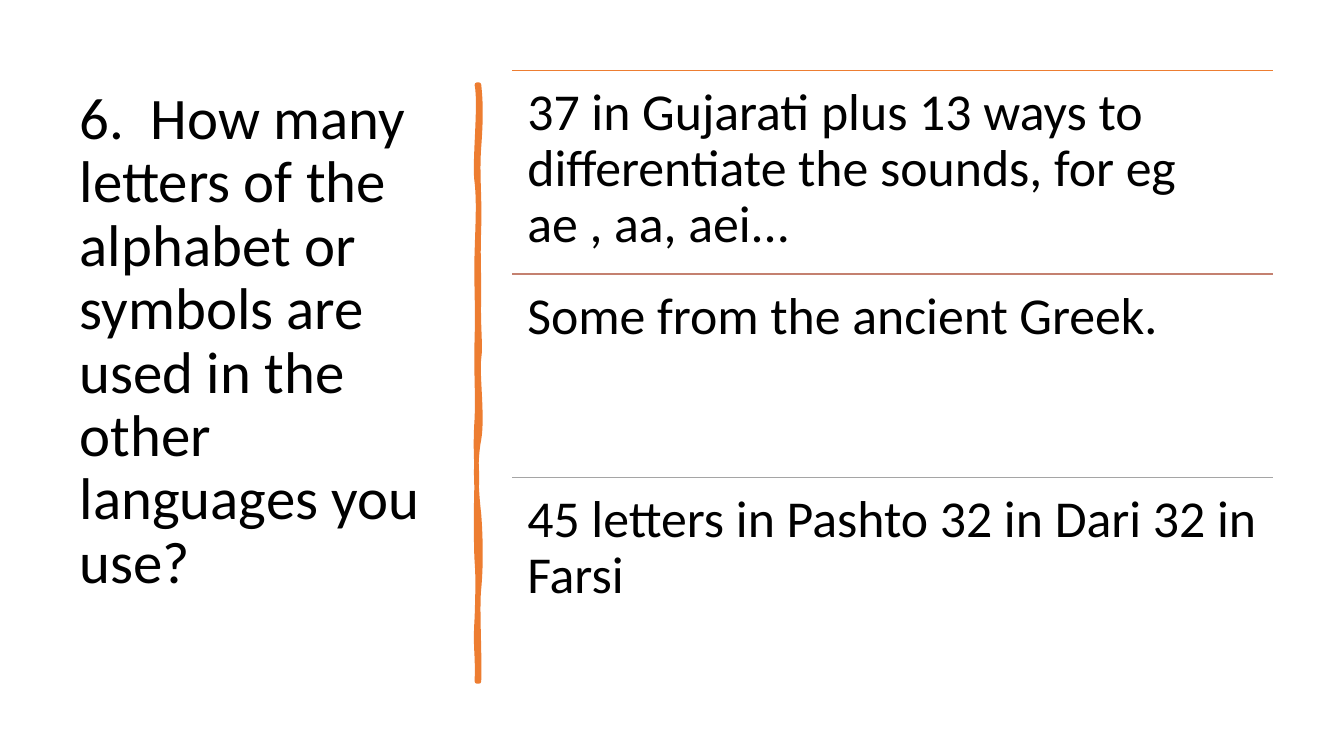
from dataclasses import dataclass

from lxml import etree
from pptx import Presentation
from pptx import util as u
from pptx.dml.color import RGBColor
from pptx.enum import shapes, text
from pptx.oxml.ns import qn
from pptx.util import Inches


@dataclass(frozen=True)
class Theme:
    font: str = "Calibri"
    ink: str = "000000"
    orange: str = "ED7D31"
    clay: str = "C48170"
    grey: str = "A5A5A5"
    title_size: float = 42
    answer_size: float = 37
    brush_width: float = 3.25
    rule_width: float = 1


theme = Theme()


def write(frame, words, size):
    frame.word_wrap = True
    frame.auto_size = text.MSO_AUTO_SIZE.NONE
    para = frame.paragraphs[0]
    para.alignment = text.PP_ALIGN.LEFT
    para.line_spacing = 0.9
    span = para.add_run()
    span.text = words
    span.font.name = theme.font
    span.font.size = u.Pt(size)
    span.font.color.rgb = RGBColor.from_string(theme.ink)


deck = Presentation()
deck.slide_width, deck.slide_height = Inches(13.33), Inches(7.5)
page = deck.slides.add_slide(deck.slide_layouts[5])

# Question; the deeper bottom margin lifts the centred text
title = page.shapes.title
title.left, title.top = Inches(0.69), Inches(0.7)
title.width, title.height = Inches(3.74), Inches(6.11)
title.text_frame.vertical_anchor = text.MSO_ANCHOR.MIDDLE
title.text_frame.margin_bottom = Inches(0.77)
write(title.text_frame,
      "6.  How many letters of the alphabet or symbols are used in the other languages you use?",
      theme.title_size)

# Hand-drawn divider: one shape with a stroked outline and a filled body.
# Each curve is two control points and an end point, in inches.
outline_curves = [
    (4.77, 1.02, 4.77, 1.19, 4.75, 1.46), (4.73, 1.73, 4.76, 1.95, 4.75, 2.26),
    (4.74, 2.57, 4.75, 2.62, 4.75, 2.94), (4.74, 3.25, 4.77, 3.42, 4.75, 3.56),
    (4.73, 3.7, 4.79, 4.14, 4.75, 4.36), (4.71, 4.57, 4.72, 4.84, 4.75, 5.1),
    (4.77, 5.36, 4.77, 5.64, 4.75, 5.84), (4.73, 6.03, 4.76, 6.5, 4.75, 6.76),
    (4.74, 6.76, 4.73, 6.76, 4.73, 6.76), (4.74, 6.46, 4.71, 6.44, 4.73, 6.13),
    (4.74, 5.83, 4.74, 5.7, 4.73, 5.57), (4.72, 5.44, 4.72, 4.95, 4.73, 4.77),
    (4.73, 4.59, 4.71, 4.45, 4.73, 4.15), (4.74, 3.86, 4.72, 3.73, 4.73, 3.35),
    (4.74, 2.98, 4.72, 2.81, 4.73, 2.5), (4.74, 2.18, 4.75, 2, 4.73, 1.81),
    (4.7, 1.63, 4.77, 1.04, 4.73, 0.84), (4.74, 0.84, 4.74, 0.84, 4.75, 0.84),
]
body_curves = [
    (4.75, 1.15, 4.72, 1.25, 4.75, 1.52), (4.77, 1.79, 4.74, 1.97, 4.75, 2.08),
    (4.76, 2.2, 4.74, 2.55, 4.75, 2.94), (4.76, 3.33, 4.73, 3.43, 4.75, 3.62),
    (4.77, 3.81, 4.77, 3.97, 4.75, 4.3), (4.72, 4.63, 4.75, 4.74, 4.75, 5.16),
    (4.75, 5.57, 4.74, 5.53, 4.75, 5.78), (4.76, 6.03, 4.74, 6.47, 4.75, 6.76),
    (4.74, 6.75, 4.73, 6.75, 4.73, 6.76), (4.7, 6.49, 4.74, 6.32, 4.73, 6.13),
    (4.72, 5.95, 4.75, 5.69, 4.73, 5.39), (4.71, 5.1, 4.76, 5, 4.73, 4.71),
    (4.7, 4.42, 4.77, 4.2, 4.73, 3.86), (4.69, 3.51, 4.74, 3.25, 4.73, 3),
    (4.71, 2.75, 4.71, 2.59, 4.73, 2.38), (4.74, 2.16, 4.74, 1.85, 4.73, 1.64),
    (4.71, 1.43, 4.75, 1.21, 4.73, 0.84), (4.74, 0.84, 4.74, 0.84, 4.75, 0.84),
]
brush_left, brush_top, brush_right, brush_bottom = map(Inches, (4.73, 0.84, 4.75, 6.76))
builder = page.shapes.build_freeform(brush_right, brush_top)
builder.add_line_segments([(brush_right, brush_bottom), (brush_left, brush_bottom),
                           (brush_left, brush_top)], close=True)
brush = builder.convert_to_shape()
brush.shadow.inherit = False
brush.fill.solid()
brush.fill.fore_color.rgb = RGBColor.from_string(theme.orange)
brush.line.color.rgb = RGBColor.from_string(theme.orange)
brush.line.width = u.Pt(theme.brush_width)
etree.SubElement(brush._element.spPr.find(qn("a:ln")), qn("a:round"))

# Bend the straight sides into curves
outlines = brush._element.spPr.find(".//" + qn("a:pathLst"))
for straight in list(outlines):
    outlines.remove(straight)
for curves, option, value in ((outline_curves, "fill", "none"), (body_curves, "stroke", "0")):
    outline = etree.SubElement(outlines, qn("a:path"), {
        "w": str(brush.width), "h": str(brush.height), option: value})
    for tag, numbers in [("a:moveTo", (4.75, 0.84))] + [("a:cubicBezTo", c) for c in curves]:
        move = etree.SubElement(outline, qn(tag))
        for x, y in zip(numbers[::2], numbers[1::2]):
            etree.SubElement(move, qn("a:pt"), x=str(Inches(x) - brush_left),
                             y=str(Inches(y) - brush_top))
    etree.SubElement(outline, qn("a:close"))

# Answers, each under its own rule
answers = [
    ("37 in Gujarati plus 13 ways to differentiate the sounds, for eg ae , aa, aei...", theme.orange),
    ("Some from the ancient Greek.", theme.clay),
    ("45 letters in Pashto 32 in Dari 32 in Farsi", theme.grey),
]
left, width, row_height = Inches(5.08), Inches(7.55), Inches(2.02)
for row, (answer, color) in enumerate(answers):
    top = Inches(0.7) + row * row_height
    rule = page.shapes.add_connector(shapes.MSO_CONNECTOR.STRAIGHT, left, top, left + width, top)
    rule.line.color.rgb = RGBColor.from_string(color)
    rule.line.width = u.Pt(theme.rule_width)
    etree.SubElement(rule._element.spPr, qn("a:effectLst"))

    box = page.shapes.add_textbox(left, top, width, row_height)
    frame = box.text_frame
    frame.margin_left = frame.margin_right = Inches(0.15)
    frame.margin_top = frame.margin_bottom = Inches(0.15)
    write(frame, answer, theme.answer_size)

deck.save("out.pptx")
